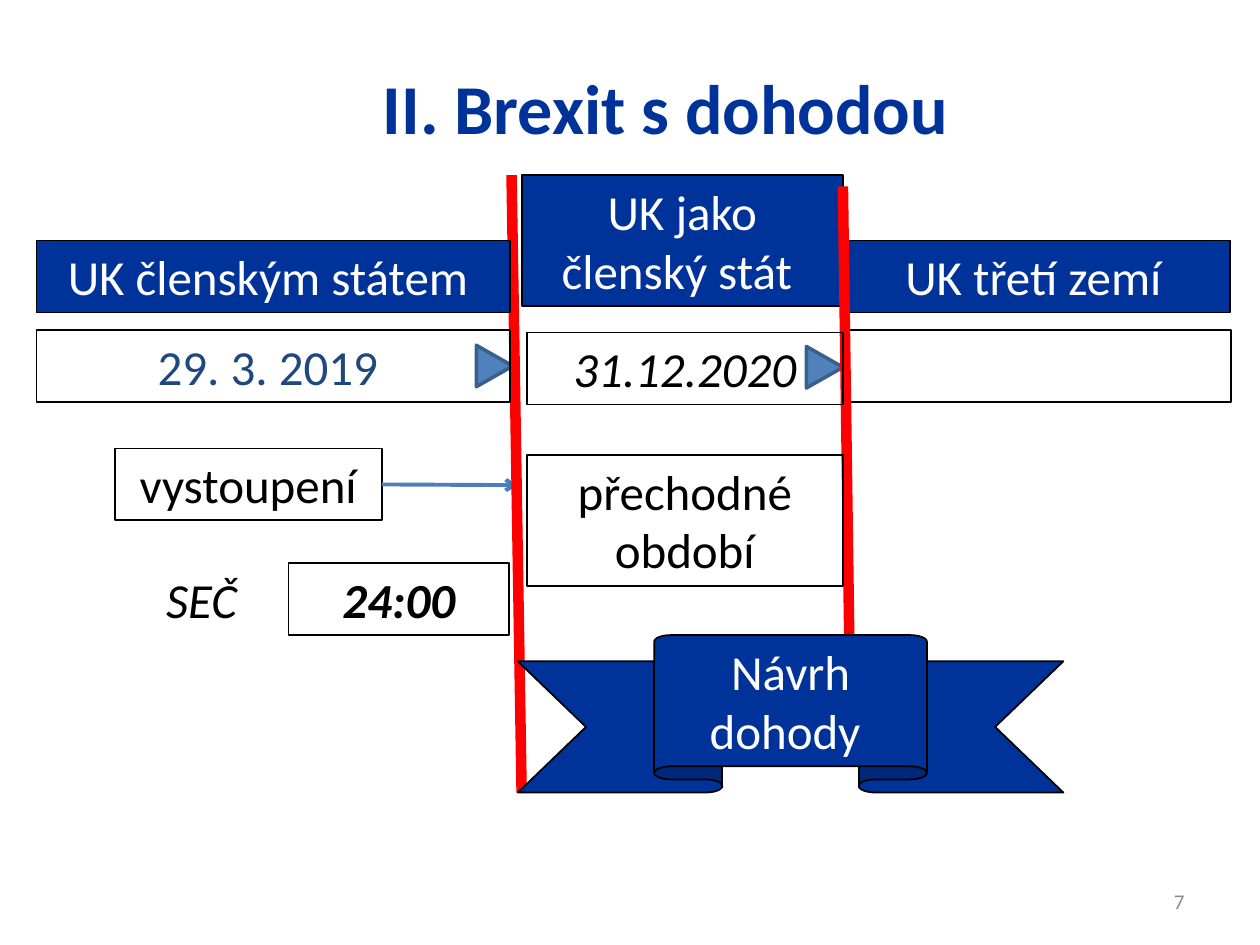
from lxml.etree import SubElement
from pptx import Presentation
from pptx.dml.color import RGBColor
from pptx.enum.shapes import MSO_CONNECTOR as Connector, MSO_SHAPE as Shape
from pptx.enum.text import MSO_ANCHOR as Anchor, MSO_AUTO_SIZE as AutoSize, PP_ALIGN as Align
from pptx.oxml.ns import qn
from pptx.util import Inches, Pt

NAVY = RGBColor(0x00, 0x33, 0x99)
BLACK = RGBColor(0x00, 0x00, 0x00)
WHITE = RGBColor(0xFF, 0xFF, 0xFF)
RED = RGBColor(0xFF, 0x00, 0x00)
BLUE = RGBColor(0x4F, 0x81, 0xBD)
BLUE_EDGE = RGBColor(0x3A, 0x5F, 0x8C)
BLUE_LINE = RGBColor(0x4B, 0x7E, 0xBC)
DATE_BLUE = RGBColor(0x1F, 0x49, 0x7D)
GREY = RGBColor(0x8C, 0x8C, 0x8C)


class TimelineSlide:
    """Draws the parts of the Brexit timeline in one shared style."""

    font_name = "Calibri"
    row_height = 0.57

    def __init__(self, slide):
        self.slide = slide
        self.shapes = slide.shapes

    def set_text(self, shape, text, color=BLACK, size=28, align=Align.CENTER,
                 anchor=Anchor.TOP, auto_size=AutoSize.SHAPE_TO_FIT_TEXT, **emphasis):
        frame = shape.text_frame
        frame.text = text
        layout = {"word_wrap": True, "vertical_anchor": anchor, "auto_size": auto_size}
        for key, value in layout.items():
            setattr(frame, key, value)
        paragraph = frame.paragraphs[0]
        paragraph.alignment = align
        font = paragraph.runs[0].font
        for key, value in {"name": self.font_name, "size": Pt(size), **emphasis}.items():
            setattr(font, key, value)
        font.color.rgb = color

    def title(self, text, *box):
        heading = self.shapes.title
        for key, value in zip(("left", "top", "width", "height"), box):
            setattr(heading, key, Inches(value))
        self.set_text(heading, text, NAVY, 40, anchor=Anchor.MIDDLE,
                      auto_size=AutoSize.NONE, bold=True)

    def label(self, text, left, top, width, height=row_height, **style):
        box = self.shapes.add_textbox(*map(Inches, (left, top, width, height)))
        self.set_text(box, text, **style)

    def block(self, text, left, top, width, height=row_height, kind=Shape.RECTANGLE,
              fill=None, edge=BLACK, weight=1, **style):
        block = self.shapes.add_shape(kind, *map(Inches, (left, top, width, height)))
        block.shadow.inherit = False
        if fill is None:
            block.fill.background()
        else:
            block.fill.solid()
            block.fill.fore_color.rgb = fill
        block.line.color.rgb = edge
        block.line.width = Pt(weight)
        if text:
            self.set_text(block, text, **style)
        return block

    def banner(self, text, *box, **options):
        return self.block(text, *box, fill=NAVY, color=WHITE, **options)

    def marker(self, left, top):
        triangle = self.block("", left, top, 0.33, 0.29, kind=Shape.ISOSCELES_TRIANGLE,
                              fill=BLUE, edge=BLUE_EDGE, weight=2)
        triangle.rotation = 90

    def line(self, start, end, color, weight, source=None, arrow=False):
        line = self.shapes.add_connector(Connector.STRAIGHT, *map(Inches, start + end))
        line.line.color.rgb = color
        line.line.width = Pt(weight)
        properties = line._element.spPr
        if arrow:
            SubElement(properties.find(qn("a:ln")), qn("a:tailEnd"), type="arrow")
        SubElement(properties, qn("a:effectLst"))
        if source is not None:
            line.begin_connect(source, 3)


def main():
    prs = Presentation()
    prs.slide_width, prs.slide_height = Inches(10), Inches(7.5)
    timeline = TimelineSlide(prs.slides.add_slide(prs.slide_layouts[5]))
    header_top, date_top, time_top = 1.91, 2.62, 4.47

    timeline.title(" II. Brexit s dohodou", 0.57, 0.22, 9.3, 1.25)
    timeline.label("7", 7.17, 6.95, 2.33, 0.4, color=GREY, size=12, align=Align.RIGHT,
                   anchor=Anchor.MIDDLE, auto_size=AutoSize.NONE)

    timeline.banner("UK třetí zemí ", 6.73, header_top, 3.03)
    timeline.block("", 6.74, date_top, 3.03)
    timeline.marker(6.38, 2.77)
    timeline.marker(3.76, 2.76)

    withdrawal = timeline.block("vystoupení", 0.91, 3.56, 2.12)
    timeline.line((3.03, 3.85), (4.11, 3.85), BLUE_LINE, 2.25, source=withdrawal, arrow=True)
    timeline.line((4.06, 1.39), (4.14, 6.29), RED, 6)

    timeline.banner("UK členským státem ", 0.29, header_top, 3.76)
    timeline.block("29. 3. 2019 ", 0.29, date_top, 3.76, color=DATE_BLUE)
    timeline.block("24:00", 2.29, time_top, 1.75, bold=True, italic=True)
    timeline.label("SEČ", 1.07, time_top, 1.06, italic=True)

    timeline.banner("UK jako členský stát ", 4.14, 1.39, 2.55, 1.04)
    timeline.line((6.69, 1.48), (6.74, 5.04), RED, 6)
    timeline.block("31.12.2020", 4.18, 2.64, 2.51, italic=True)
    timeline.block("přechodné období", 4.18, 3.61, 2.51, 1.04)
    timeline.banner("Návrh dohody ", 4.11, 5.04, 4.33, 1.25, kind=Shape.UP_RIBBON)

    prs.save("out.pptx")


if __name__ == "__main__":
    main()
